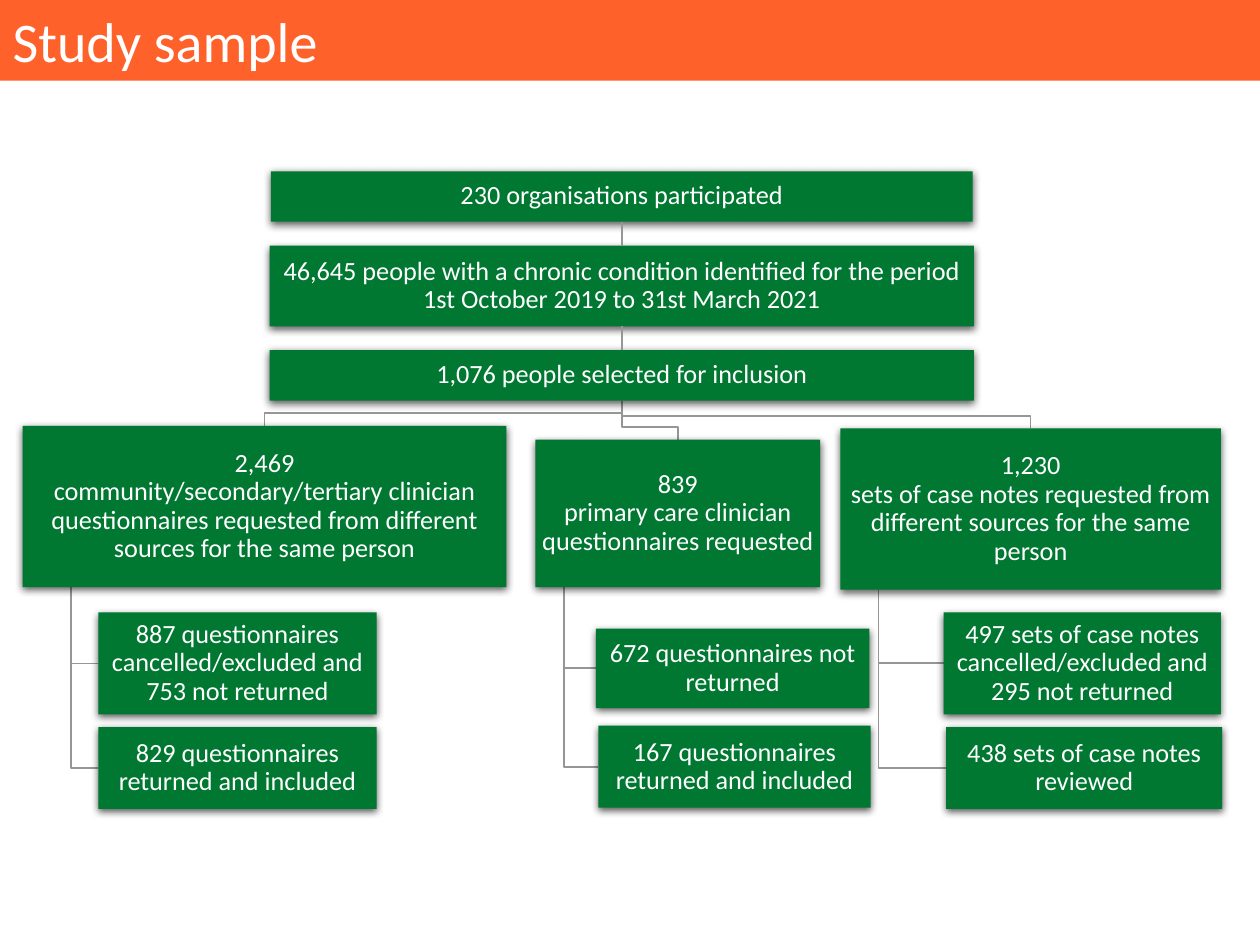
import pptx
import pptx.util
import pptx.dml.color
import pptx.enum.shapes
import pptx.enum.text
import pptx.oxml
import pptx.oxml.ns
from lxml import etree
from pptx.util import Inches

HUES = {"bar": "FE612A", "box": "007832", "line": "969696", "text": "FFFFFF"}
FONT = "Calibri"

# Each box is left, top, width, height in inches
STACK = [
    ((2.15, 1.36, 5.57, 0.4), "230 organisations participated"),
    ((2.14, 1.95, 5.59, 0.64),
     "46,645 people with a chronic condition identified for the period "
     "1st October 2019 to 31st March 2021"),
    ((2.14, 2.78, 5.59, 0.4), "1,076 people selected for inclusion"),
]
GROUPS = [
    [((0.18, 3.38, 3.84, 1.28),
      "2,469\ncommunity/secondary/tertiary clinician questionnaires "
      "requested from different sources for the same person"),
     ((0.78, 4.86, 2.21, 0.81),
      "887 questionnaires cancelled/excluded and 753 not returned"),
     ((0.78, 5.77, 2.21, 0.65), "829 questionnaires returned and included")],
    [((4.25, 3.49, 2.26, 1.17),
      "839\nprimary care clinician questionnaires requested"),
     ((4.73, 4.99, 2.17, 0.63), "672 questionnaires not returned"),
     ((4.75, 5.76, 2.16, 0.65), "167 questionnaires returned and included")],
    [((6.67, 3.4, 3.02, 1.28),
      "1,230\nsets of case notes requested from different sources "
      "for the same person"),
     ((7.49, 4.86, 2.2, 0.81),
      "497 sets of case notes cancelled/excluded and 295 not returned"),
     ((7.51, 5.77, 2.19, 0.65), "438 sets of case notes reviewed")],
]


def hue(name):
    return pptx.dml.color.RGBColor.from_string(HUES[name])


def style(para, size):
    for run in para.runs:
        run.font.name = FONT
        run.font.size = pptx.util.Pt(size)
        run.font.color.rgb = hue("text")


def ink(line):
    line.color.rgb = hue("line")
    line.width = pptx.util.Pt(1)


def shade(shape):
    """Give the shape a soft shadow straight below it."""
    shape.shadow.inherit = False
    glow = shape.element.spPr.find(pptx.oxml.ns.qn("a:effectLst"))
    glow.append(pptx.oxml.parse_xml(
        f'<a:outerShdw {pptx.oxml.ns.nsdecls("a")} blurRad="57150" '
        'dist="19050" dir="5400000" algn="ctr" rotWithShape="0">'
        '<a:srgbClr val="000000"><a:alpha val="63000"/></a:srgbClr>'
        '</a:outerShdw>'))


def add_title(slide, box, text):
    title = slide.shapes.title
    title.left, title.top, title.width, title.height = map(Inches, box)
    title.fill.solid()
    title.fill.fore_color.rgb = hue("bar")
    frame = title.text_frame
    frame.text = text
    frame.auto_size = pptx.enum.text.MSO_AUTO_SIZE.NONE
    frame.vertical_anchor = pptx.enum.text.MSO_ANCHOR.TOP
    frame.paragraphs[0].alignment = pptx.enum.text.PP_ALIGN.LEFT
    style(frame.paragraphs[0], 32)


def add_box(slide, box, text):
    shape = slide.shapes.add_shape(
        pptx.enum.shapes.MSO_SHAPE.RECTANGLE, *map(Inches, box))
    shape.fill.solid()
    shape.fill.fore_color.rgb = hue("box")
    shape.line.fill.background()
    shade(shape)
    frame = shape.text_frame
    frame.word_wrap = True
    frame.vertical_anchor = pptx.enum.text.MSO_ANCHOR.MIDDLE
    frame.margin_left = frame.margin_right = Inches(0.01)
    frame.margin_top = frame.margin_bottom = Inches(0.01)
    para = frame.paragraphs[0]
    para.text = text
    para.alignment = pptx.enum.text.PP_ALIGN.CENTER
    para.line_spacing = 0.9
    style(para, 15)
    return shape


def add_bend(slide, spots):
    """Draw an open line through the given points."""
    first, *rest = [(Inches(x), Inches(y)) for x, y in spots]
    pen = slide.shapes.build_freeform(*first)
    pen.add_line_segments(rest, close=False)
    bend = pen.convert_to_shape()
    bend.fill.background()
    bend.shadow.inherit = False
    ink(bend.line)


def add_stack(slide, items):
    shapes = [add_box(slide, box, text) for box, text in items]
    for top, low in zip(shapes, shapes[1:]):
        link = slide.shapes.add_connector(
            pptx.enum.shapes.MSO_CONNECTOR.STRAIGHT, 0, 0, 0, 0)
        link.begin_connect(top, 2)
        link.end_connect(low, 0)
        ink(link.line)
        etree.SubElement(link.element.spPr, pptx.oxml.ns.qn("a:effectLst"))


def add_group(slide, root, items):
    """Draw a head box hung from root, with its leaves below."""
    (left, top, width, height), _ = items[0]
    x, y, wide, high = root
    trunk, mid, turn = x + wide / 2, left + width / 2, top - 0.1
    add_bend(slide, [(trunk, y + high), (trunk, turn), (mid, turn), (mid, top)])

    # Leaves hang from a rail a tenth of the way along the head
    rail = left + width / 10
    for (x, y, _, high), _ in items[1:]:
        row = y + high / 2
        add_bend(slide, [(rail, top + height), (rail, row), (x, row)])
    for box, text in items:
        add_box(slide, box, text)


def main():
    deck = pptx.Presentation()
    deck.slide_width, deck.slide_height = Inches(10), Inches(7.5)
    slide = deck.slides.add_slide(deck.slide_layouts[5])
    add_title(slide, (0, 0, 10, 0.64), "Study sample")
    # Right group first, so that the left ones lie over it
    for items in reversed(GROUPS):
        add_group(slide, STACK[-1][0], items)
    add_stack(slide, STACK)
    deck.save("out.pptx")


if __name__ == "__main__":
    main()
